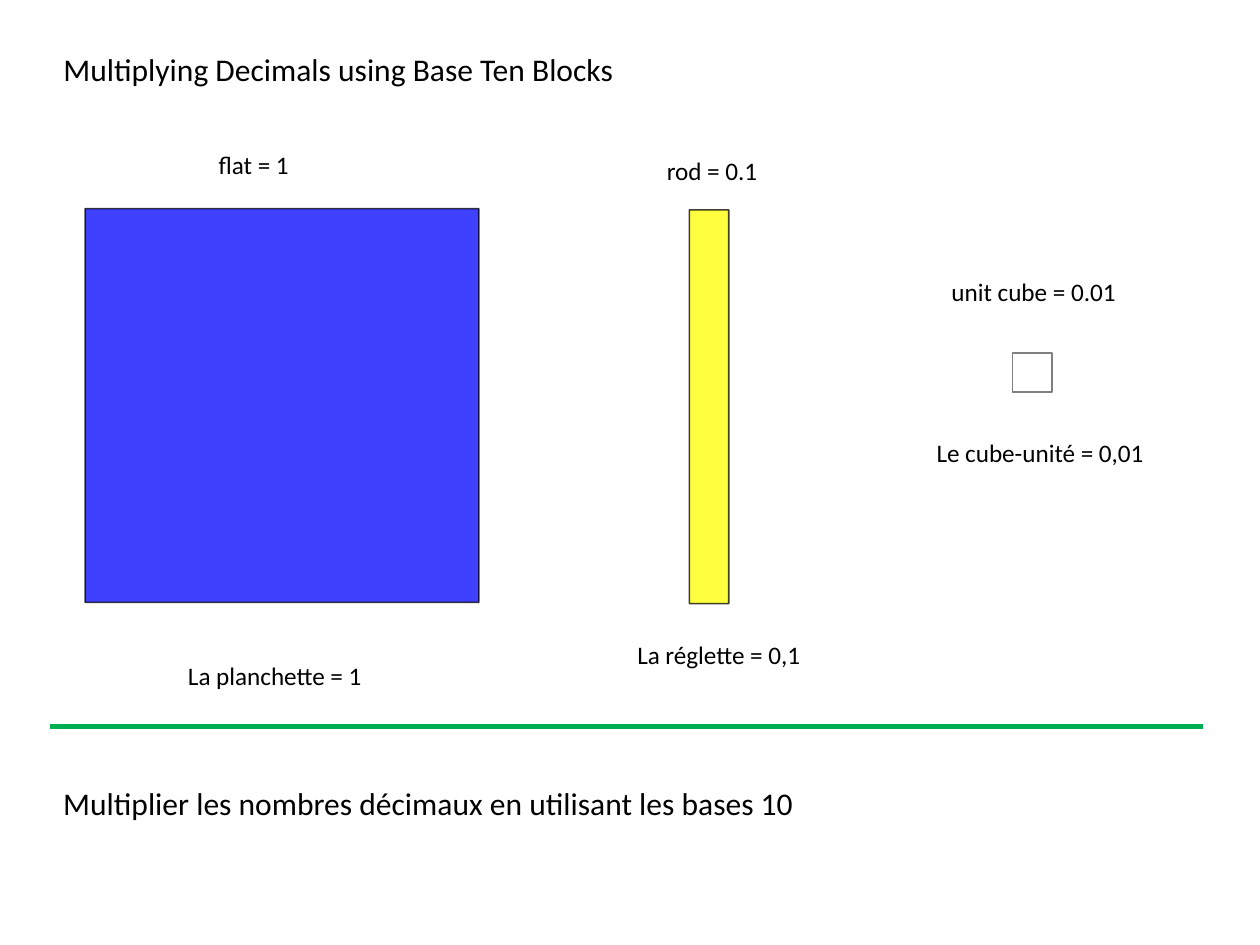
"""Build a bilingual slide on multiplying decimals with base ten blocks."""
from lxml import etree
from pptx import Presentation
from pptx.dml.color import RGBColor
from pptx.enum.shapes import MSO_CONNECTOR, MSO_SHAPE
from pptx.enum.text import MSO_ANCHOR, MSO_AUTO_SIZE, PP_ALIGN
from pptx.oxml.ns import qn
from pptx.util import Inches, Pt

RECTANGLE = MSO_SHAPE.RECTANGLE
STRAIGHT = MSO_CONNECTOR.STRAIGHT
TOP = MSO_ANCHOR.TOP
LEFT = PP_ALIGN.LEFT
FIXED = MSO_AUTO_SIZE.NONE

THEME = {
    "font": "Calibri",
    "heading": Pt(20),
    "label": Pt(16),
    "text": RGBColor.from_string("000000"),
    "flat": RGBColor.from_string("0000FF"),
    "rod": RGBColor.from_string("FFFF00"),
    "cube": RGBColor.from_string("FFFFFF"),
    "edge": RGBColor.from_string("000000"),
    "cube_edge": RGBColor.from_string("808080"),
    "divider": RGBColor.from_string("00B050"),
}

deck = Presentation()
deck.slide_width, deck.slide_height = Inches(11.11), Inches(8.33)
COLUMNS, ROWS = 32, 24
column, row = deck.slide_width / COLUMNS, deck.slide_height / ROWS
slide = deck.slides.add_slide(deck.slide_layouts[5])


def place(box, left, top, width, height):
    """Position a box in grid columns and rows."""
    box.left, box.top = round(left * column), round(top * row)
    box.width, box.height = round(width * column), round(height * row)


def write(box, wording, size):
    """Fill a box with one left-aligned line of text."""
    frame = box.text_frame
    frame.text = wording
    frame.word_wrap = True
    frame.auto_size = FIXED
    frame.vertical_anchor = TOP
    line = frame.paragraphs[0]
    line.alignment = LEFT
    font = line.runs[0].font
    font.name, font.size, font.color.rgb = THEME["font"], size, THEME["text"]


blocks = [
    (2.16, 5.3, 10, 10, "flat", "edge", 75),
    (25.72, 8.96, 1, 1, "cube", "cube_edge", 100),
    (17.51, 5.33, 1, 10, "rod", "edge", 75),
]
for left, top, width, height, fill, edge, opacity in blocks:
    block = slide.shapes.add_shape(RECTANGLE, 0, 0, 0, 0)
    place(block, left, top, width, height)
    block.shadow.inherit = False
    block.fill.solid()
    block.fill.fore_color.rgb = THEME[fill]
    block.line.color.rgb = THEME[edge]
    block.line.width = Pt(1)
    if opacity < 100:
        for tint in block.element.spPr.iter(qn("a:srgbClr")):
            etree.SubElement(tint, qn("a:alpha")).set("val", str(opacity * 1000))

title = slide.shapes.title
place(title, 1.32, 1.12, 30, 1.27)
write(title, "Multiplying Decimals using Base Ten Blocks", THEME["heading"])

captions = [
    ("flat = 1", 5.27, 3.66, 7, "label"),
    ("rod = 0.1", 16.65, 3.8, 7, "label"),
    ("unit cube = 0.01", 23.88, 6.88, 7, "label"),
    ("La planchette = 1", 4.49, 16.62, 7, "label"),
    ("La réglette = 0,1", 15.9, 16.1, 7, "label"),
    ("Le cube-unité = 0,01", 23.5, 10.97, 7, "label"),
    ("Multiplier les nombres décimaux en utilisant les bases 10", 1.32, 19.76, 23.2, "heading"),
]
for wording, left, top, width, size in captions:
    caption = slide.shapes.add_textbox(0, 0, 0, 0)
    place(caption, left, top, width, 1.07)
    write(caption, wording, THEME[size])

divider = slide.shapes.add_connector(STRAIGHT, 0, 0, 0, 0)
place(divider, 1.27, 18.46, 29.29, 0)
divider.line.color.rgb = THEME["divider"]
divider.line.width = Pt(3)
etree.SubElement(divider.element.spPr, qn("a:effectLst"))

deck.save("out.pptx")
